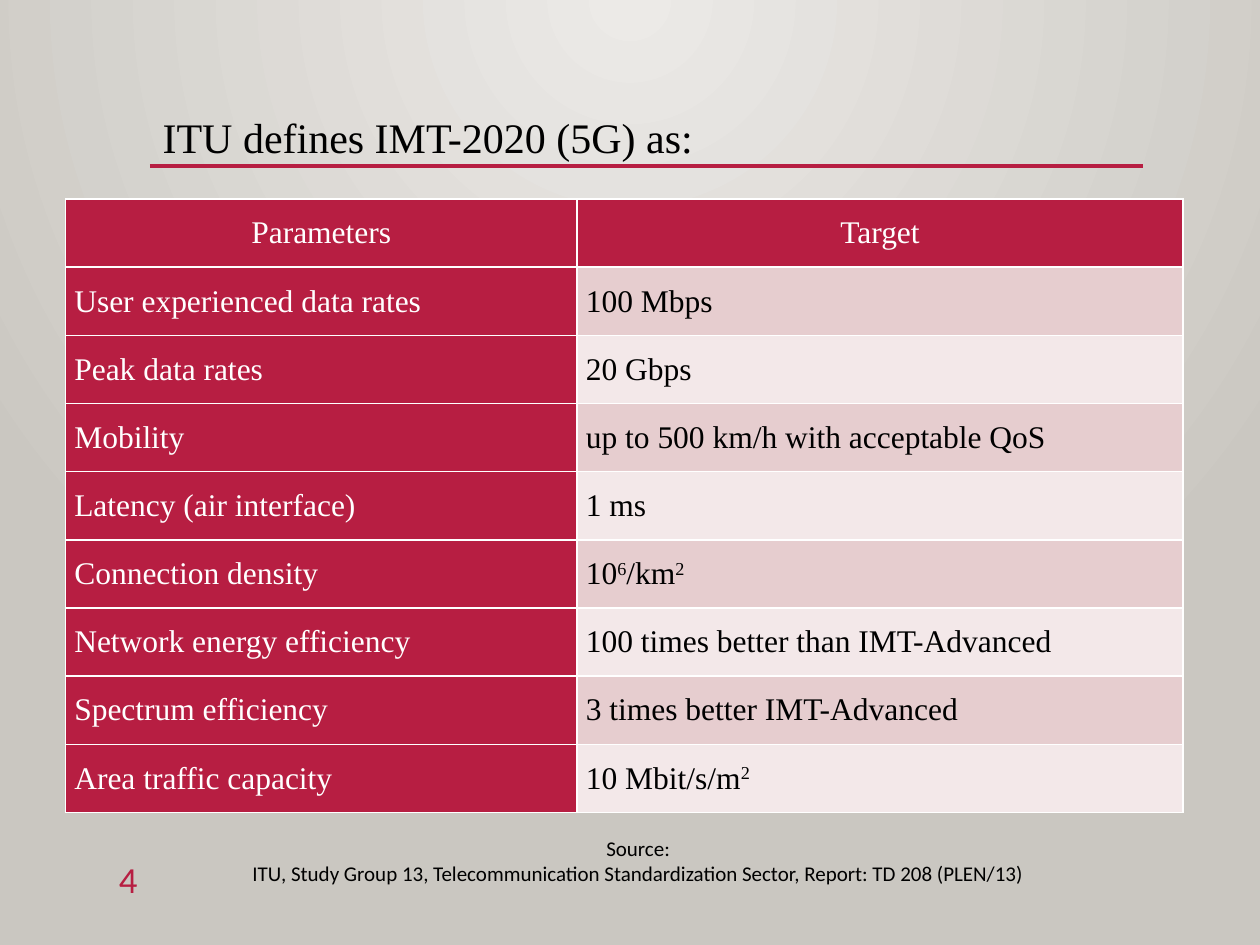
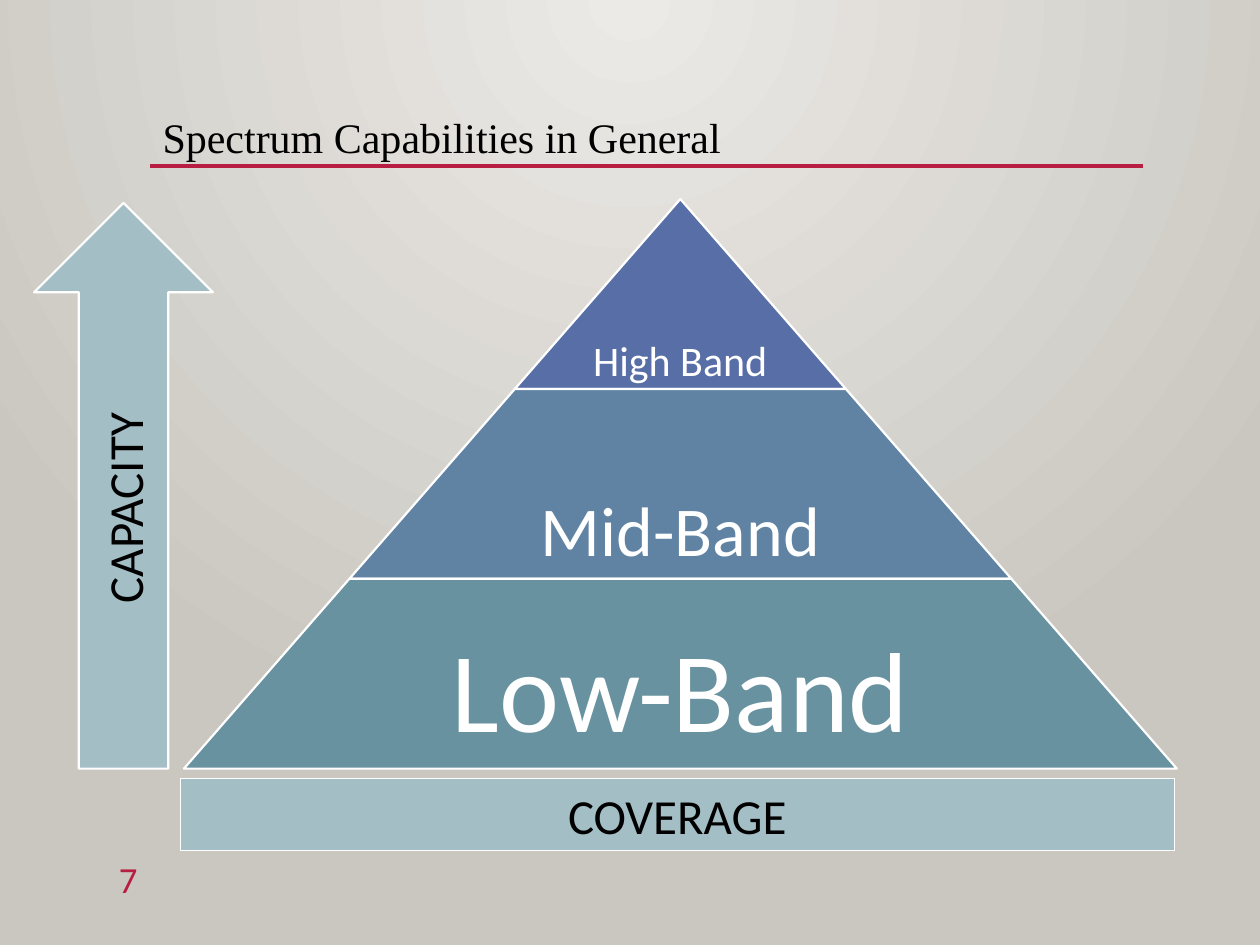
from dataclasses import dataclass

from lxml.etree import SubElement
from pptx import Presentation
from pptx.dml.color import RGBColor as RGB
from pptx.enum.shapes import MSO_CONNECTOR as Connector, MSO_SHAPE as Shape
from pptx.enum.text import MSO_ANCHOR as Anchor, MSO_AUTO_SIZE as AutoSize, PP_ALIGN as Align
from pptx.oxml.ns import qn
from pptx.util import Inches, Pt


@dataclass(frozen=True)
class Theme:
    serif: str = "Times New Roman"
    sans: str = "Calibri"
    accent: str = "B71E42"
    ink: str = "000000"
    white: str = "FFFFFF"
    glow: str = "ECEAE7"
    backdrop: str = "CAC7C1"
    rows: tuple = ("E6CDCF", "F3E8E9")
    bands: tuple = ("586EA6", "6083A3", "6892A0")
    axis: str = "A4BEC6"
    title_size: int = 24
    number_size: int = 21
    table_size: int = 18
    source_size: int = 12
    axis_size: int = 28
    band_sizes: tuple = (24, 40, 65)


theme = Theme()


def style_text(paragraph, font, size, color, align=Align.LEFT):
    paragraph.alignment = align
    paragraph.font.name = font
    paragraph.font.size = Pt(size)
    paragraph.font.bold = False
    paragraph.font.color.rgb = RGB.from_string(color)


def paint(shape, fill, line_width):
    shape.shadow.inherit = False
    shape.fill.solid()
    shape.fill.fore_color.rgb = RGB.from_string(fill)
    shape.line.color.rgb = RGB.from_string(theme.white)
    shape.line.width = Pt(line_width)


prs = Presentation()
prs.slide_width, prs.slide_height = Inches(10), Inches(7.5)

backdrop = prs.slide_master.background.fill
backdrop.gradient()
for stop, color in zip(backdrop.gradient_stops, (theme.glow, theme.backdrop)):
    stop.color.rgb = RGB.from_string(color)
gradient = prs.slide_master.element.find(".//" + qn("a:gradFill"))
gradient.remove(gradient.find(qn("a:lin")))
for stop, position in zip(gradient.iter(qn("a:gs")), ("0", "100000")):
    stop.set("pos", position)
circle = SubElement(gradient, qn("a:path"), path="circle")
SubElement(circle, qn("a:fillToRect"), l="43000", t="0", r="43000", b="100000")

slides = []
for heading, number in (
    ("ITU defines IMT-2020 (5G) as:", "4"),
    ("Spectrum Capabilities in General", "7"),
):
    slide = prs.slides.add_slide(prs.slide_layouts[5])
    slides.append(slide)

    title = slide.shapes.title
    title.left, title.top = Inches(1.19), Inches(0.83)
    title.width, title.height = Inches(7.88), Inches(0.51)
    title.text_frame.text = heading
    title.text_frame.auto_size = AutoSize.NONE
    title.text_frame.vertical_anchor = Anchor.BOTTOM
    title.text_frame.paragraphs[0].line_spacing = 0.9
    style_text(title.text_frame.paragraphs[0], theme.serif, theme.title_size, theme.ink)

    rule = slide.shapes.add_connector(
        Connector.STRAIGHT, Inches(1.19), Inches(1.32), Inches(9.07), Inches(1.32)
    )
    rule.line.color.rgb = RGB.from_string(theme.accent)
    rule.line.width = Pt(2.5)
    SubElement(rule.element.spPr, qn("a:effectLst"))

    page = slide.shapes.add_textbox(Inches(0.52), Inches(6.75), Inches(0.67), Inches(0.55))
    page.text_frame.word_wrap = True
    page.text_frame.text = number
    style_text(page.text_frame.paragraphs[0], theme.sans, theme.number_size, theme.accent, Align.RIGHT)

targets_slide, spectrum_slide = slides

source = targets_slide.shapes.add_textbox(Inches(0.73), Inches(6.58), Inches(8.67), Inches(0.5))
source.text_frame.word_wrap = True
source.text_frame.text = (
    "Source:\n"
    "ITU, Study Group 13, Telecommunication Standardization Sector, Report: TD 208 (PLEN/13)"
)
for paragraph in source.text_frame.paragraphs:
    style_text(paragraph, theme.sans, theme.source_size, theme.ink, Align.CENTER)

requirements = (
    ("Parameters", "Target"),
    ("User experienced data rates", "100 Mbps"),
    ("Peak data rates", "20 Gbps"),
    ("Mobility", "up to 500 km/h with acceptable QoS"),
    ("Latency (air interface)", "1 ms"),
    ("Connection density", "10^6^/km^2"),
    ("Network energy efficiency", "100 times better than IMT-Advanced"),
    ("Spectrum efficiency", "3 times better IMT-Advanced"),
    ("Area traffic capacity", "10 Mbit/s/m^2"),
)
targets = targets_slide.shapes.add_table(
    len(requirements), 2, Inches(0.52), Inches(1.58), Inches(8.87), Inches(4.87)
).table
targets.first_row = targets.horz_banding = False
targets.columns[0].width, targets.columns[1].width = Inches(4.06), Inches(4.81)

for row, entries in enumerate(requirements):
    for column, entry in enumerate(entries):
        cell = targets.cell(row, column)
        cell.vertical_anchor = Anchor.MIDDLE
        cell.margin_left = cell.margin_right = Inches(0.07)
        cell.margin_top = cell.margin_bottom = Inches(0.06)
        for side in ("lnL", "lnR", "lnT", "lnB"):
            border = SubElement(cell._tc.get_or_add_tcPr(), qn("a:" + side), w=str(Pt(1)))
            SubElement(SubElement(border, qn("a:solidFill")), qn("a:srgbClr"), val=theme.white)

        is_label = row == 0 or column == 0
        cell.fill.solid()
        cell.fill.fore_color.rgb = RGB.from_string(theme.accent if is_label else theme.rows[(row - 1) % 2])
        paragraph = cell.text_frame.paragraphs[0]
        style_text(
            paragraph,
            theme.serif,
            theme.table_size,
            theme.white if is_label else theme.ink,
            Align.LEFT if row else Align.CENTER,
        )
        for index, part in enumerate(entry.split("^")):
            run = paragraph.add_run()
            run.text = part
            if index % 2:
                run._r.get_or_add_rPr().set("baseline", "30000")

pyramid_left, pyramid_top, pyramid_width, pyramid_height = 1.46, 1.58, 7.88, 4.52
band_names = ("High Band", "Mid-Band", "Low-Band")
band_height = pyramid_height / len(band_names)
for level, (name, color, size) in enumerate(zip(band_names, theme.bands, theme.band_sizes)):
    band_width = pyramid_width * (level + 1) / len(band_names)
    band = spectrum_slide.shapes.add_shape(
        Shape.TRAPEZOID,
        Inches(pyramid_left + (pyramid_width - band_width) / 2),
        Inches(pyramid_top + level * band_height),
        Inches(band_width),
        Inches(band_height),
    )
    band.adjustments[0] = pyramid_width / 2 / pyramid_height
    paint(band, color, 1.25)
    label = band.text_frame
    label.word_wrap = False
    label.vertical_anchor = Anchor.BOTTOM
    label.margin_left = label.margin_right = Inches(0.03 * (level + 1))
    label.margin_top = label.margin_bottom = Inches(0.03 * (level + 1))
    label.text = name
    label.paragraphs[0].line_spacing = 0.9
    style_text(label.paragraphs[0], theme.sans, size, theme.white, Align.CENTER)

capacity = spectrum_slide.shapes.add_shape(
    Shape.UP_ARROW, Inches(0.27), Inches(1.61), Inches(1.42), Inches(4.49)
)
capacity.element.txBody.bodyPr.set("vert", "vert270")
coverage = spectrum_slide.shapes.add_shape(
    Shape.RECTANGLE, Inches(1.43), Inches(6.18), Inches(7.89), Inches(0.57)
)
for axis, name, line_width in ((capacity, "CAPACITY", 1.25), (coverage, "COVERAGE", 0.75)):
    paint(axis, theme.axis, line_width)
    axis.text_frame.text = name
    axis.text_frame.vertical_anchor = Anchor.MIDDLE
    style_text(axis.text_frame.paragraphs[0], theme.sans, theme.axis_size, theme.ink, Align.CENTER)

prs.save("out.pptx")
